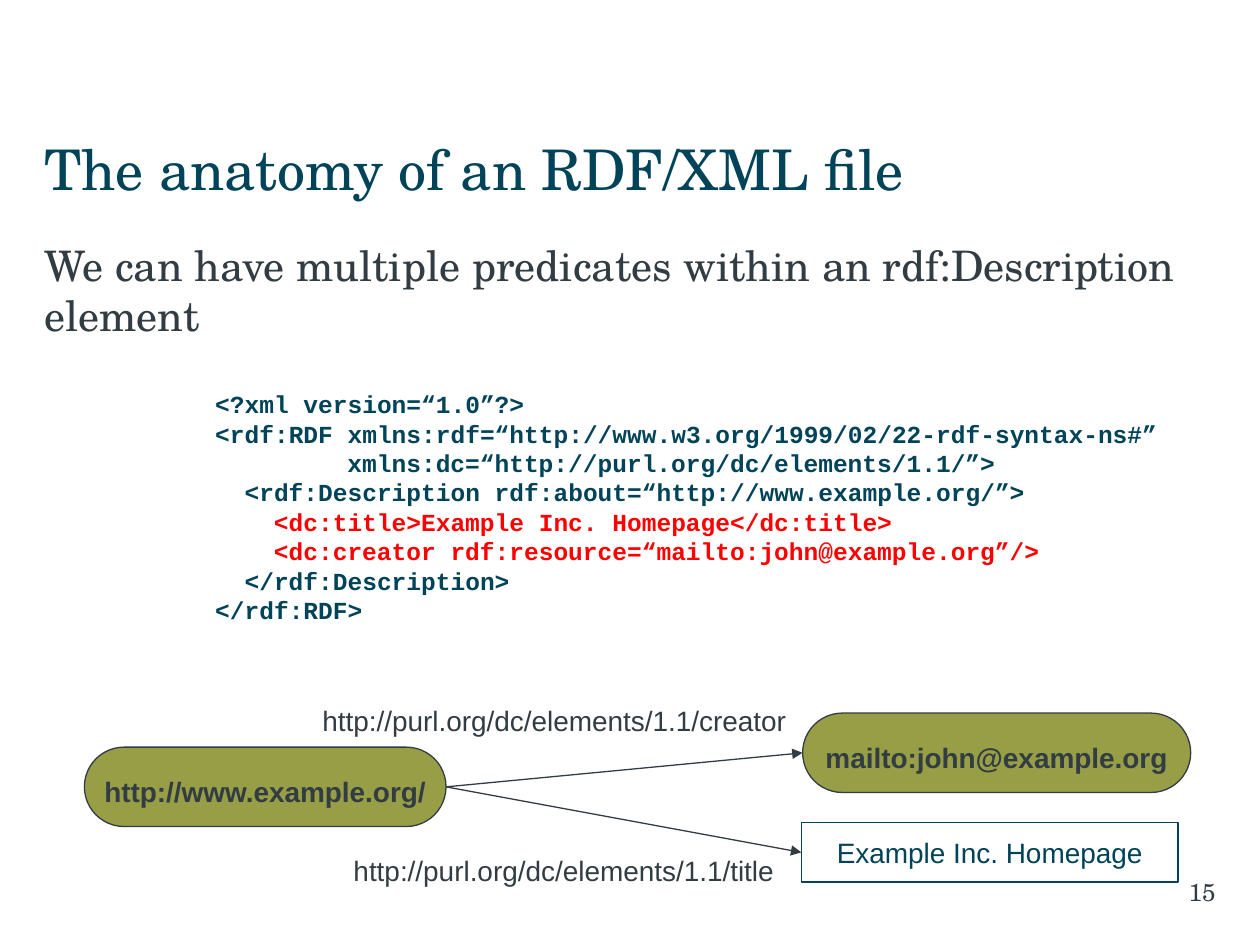
from pptx import Presentation
from pptx.dml.color import RGBColor
from pptx.enum.shapes import MSO_CONNECTOR, MSO_SHAPE
from pptx.enum.text import MSO_ANCHOR, MSO_AUTO_SIZE, PP_ALIGN
from pptx.oxml.ns import qn
from pptx.util import Inches, Pt
from lxml.etree import SubElement

COLS, ROWS = 100, 75
NAVY, GRAY, OLIVE, RED, WHITE = "014359", "323D43", "979E45", "FF0000", "FFFFFF"
SERIF, SANS, MONO = "TeX Gyre Schola", "Arial", "Courier New"
CODE_SIZE = 14
CODE_CHAR = 0.6 * CODE_SIZE  # width of one monospaced letter in points

# indent in letters, colour, text
CODE = [
    (0, NAVY, "<?xml version=“1.0”?>"),
    (0, NAVY, "<rdf:RDF xmlns:rdf=“http://www.w3.org/1999/02/22-rdf-syntax-ns#”"),
    (9, NAVY, "xmlns:dc=“http://purl.org/dc/elements/1.1/”>"),
    (2, NAVY, "<rdf:Description rdf:about=“http://www.example.org/”>"),
    (4, RED, "<dc:title>Example Inc. Homepage</dc:title>"),
    (4, RED, "<dc:creator rdf:resource=“mailto:john@example.org”/>"),
    (2, NAVY, "</rdf:Description>"),
    (0, NAVY, "</rdf:RDF>"),
]

prs = Presentation()
prs.slide_width, prs.slide_height = Inches(10), Inches(7.5)
CELL_W, CELL_H = prs.slide_width / COLS, prs.slide_height / ROWS


def grid(col, row, wide, high):
    """Turn columns and rows into left, top, width and height."""
    return [round(n * cell) for n, cell in
            zip((col, row, wide, high), (CELL_W, CELL_H) * 2)]


def color(code):
    return RGBColor.from_string(code)


def style(para, size, face, code, bold=False, align=PP_ALIGN.LEFT):
    para.alignment = align
    for run in para.runs:
        font = run.font
        font.size, font.name, font.bold = Pt(size), face, bold
        font.color.rgb = color(code)


def indent(para, points):
    """Set the left indent and drop any bullet."""
    props = para._p.get_or_add_pPr()
    props.set("marL", str(Pt(points)))
    props.set("indent", "0")
    SubElement(props, qn("a:buNone"))


def fill_holder(holder, box, text, size, code, anchor):
    holder.left, holder.top, holder.width, holder.height = grid(*box)
    frame = holder.text_frame
    frame.text = text
    frame.auto_size = MSO_AUTO_SIZE.NONE
    frame.vertical_anchor = anchor
    frame.margin_left = 0
    para = frame.paragraphs[0]
    style(para, size, SERIF, code)
    indent(para, 0)
    return para


def add_code(slide, box):
    frame = slide.shapes.add_textbox(*grid(*box)).text_frame
    frame.word_wrap = True
    frame.text = "\n".join(text for _, _, text in CODE)
    for para, (letters, code, _) in zip(frame.paragraphs, CODE):
        style(para, CODE_SIZE, MONO, code, bold=True)
        indent(para, letters * CODE_CHAR)


def add_label(slide, box, text, size=16, face=SANS, align=PP_ALIGN.CENTER):
    frame = slide.shapes.add_textbox(*grid(*box)).text_frame
    frame.word_wrap = False
    frame.vertical_anchor = MSO_ANCHOR.MIDDLE
    frame.text = text
    style(frame.paragraphs[0], size, face, GRAY, align=align)
    return frame


def add_node(slide, box, text, kind, fill, ink, edge, bold=False):
    node = slide.shapes.add_shape(kind, *grid(*box))
    node.shadow.inherit = False
    node.fill.solid()
    node.fill.fore_color.rgb = color(fill)
    node.line.color.rgb = color(edge)
    node.line.width = Pt(0.75)
    frame = node.text_frame
    frame.word_wrap = False
    frame.vertical_anchor = MSO_ANCHOR.MIDDLE
    frame.text = text
    style(frame.paragraphs[0], 16, SANS, ink, bold, PP_ALIGN.CENTER)
    return node


def add_pill(slide, box, text):
    pill = add_node(slide, box, text, MSO_SHAPE.ROUNDED_RECTANGLE,
                    OLIVE, GRAY, GRAY, bold=True)
    pill.adjustments[0] = 0.5
    pill.text_frame.margin_top = Inches(0.12)
    return pill


def add_arrow(slide, start, end):
    """Join the right side of one node to the left side of another."""
    arrow = slide.shapes.add_connector(MSO_CONNECTOR.STRAIGHT, 0, 0, 0, 0)
    arrow.begin_connect(start, 3)
    arrow.end_connect(end, 1)
    arrow.line.color.rgb = color(GRAY)
    arrow.line.width = Pt(0.75)
    SubElement(arrow.line._get_or_add_ln(), qn("a:tailEnd"), type="triangle")
    SubElement(arrow._element.spPr, qn("a:effectLst"))


def add_graph(slide, col, row):
    """Draw the subject with its two predicates and objects."""
    page = add_pill(slide, (col, row + 2.7, 28.7, 6.3), "http://www.example.org/")
    mail = add_pill(slide, (col + 57, row, 30.8, 6.3), "mailto:john@example.org")
    name = add_node(slide, (col + 56.9, row + 8.7, 29.9, 4.7),
                    "Example Inc. Homepage", MSO_SHAPE.RECTANGLE,
                    WHITE, NAVY, NAVY)
    for end in (mail, name):
        add_arrow(slide, page, end)
    add_label(slide, (col + 17.5, row - 1.3, 39.6, 3.7),
              "http://purl.org/dc/elements/1.1/creator")
    add_label(slide, (col + 20, row + 10.6, 36.1, 3.7),
              "http://purl.org/dc/elements/1.1/title")


def build():
    slide = prs.slides.add_slide(prs.slide_layouts[1])
    title, body = slide.placeholders
    fill_holder(title, (3.5, 9.8, 92.9, 7.1), "The anatomy of an RDF/XML file",
                32, NAVY, MSO_ANCHOR.MIDDLE)
    lead = fill_holder(
        body, (3.5, 18.5, 92.9, 48.9),
        "We can have multiple predicates within an rdf:Description element",
        24, GRAY, MSO_ANCHOR.TOP)
    lead.space_before, lead.space_after = Pt(0), Pt(18)
    add_code(slide, (16.1, 30.4, 78, 19.6))
    add_graph(slide, 6.7, 56.6)
    number = add_label(slide, (77.3, 69.1, 19.2, 3.4), "15", 14, SERIF,
                       PP_ALIGN.RIGHT)
    number.word_wrap = True
    number.margin_right = 0
    prs.save("out.pptx")


if __name__ == "__main__":
    build()
